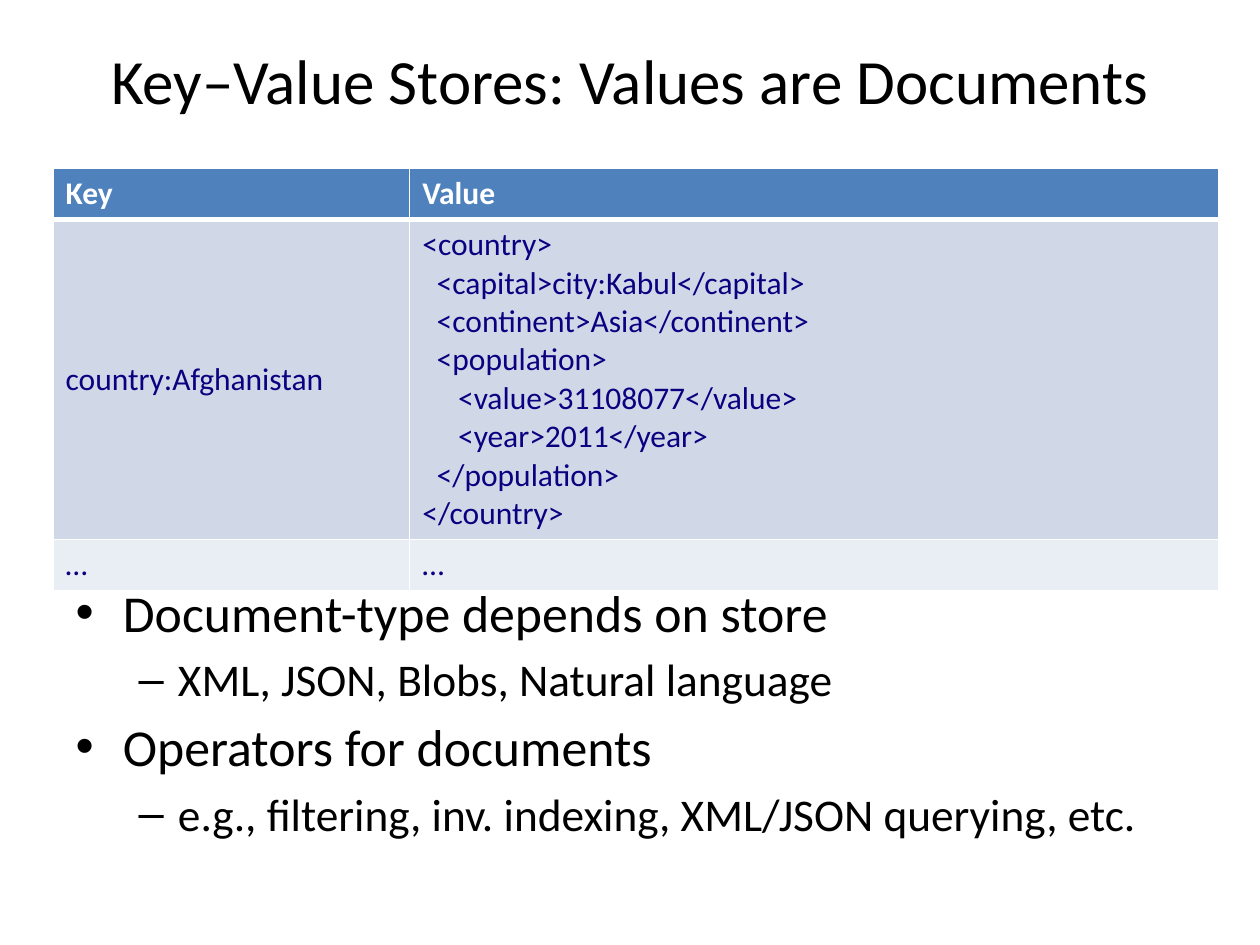
from dataclasses import dataclass

from lxml.etree import SubElement
from pptx import Presentation
from pptx.dml.color import RGBColor
from pptx.enum.text import MSO_ANCHOR, MSO_AUTO_SIZE, PP_ALIGN
from pptx.oxml.ns import qn
from pptx.util import Cm, Pt


@dataclass(frozen=True)
class Theme:
    font: str = "Calibri"
    ink: str = "000000"
    white: str = "FFFFFF"
    code: str = "0B0080"
    header: str = "4F81BD"
    bands: tuple = ("D0D8E8", "E9EDF4")
    title_size: float = 36
    level_sizes: tuple = (29.6, 25.9)
    table_size: float = 18


theme = Theme()


def add_run(paragraph, text, size, color, bold=False):
    run = paragraph.add_run()
    run.text = text
    run.font.name = theme.font
    run.font.size = Pt(size)
    run.font.bold = bold
    run.font.color.rgb = RGBColor.from_string(color)


def add_border(cell, side, width):
    line = SubElement(cell._tc.get_or_add_tcPr(), qn(f"a:ln{side}"), w=str(Pt(width)))
    fill = SubElement(line, qn("a:solidFill"))
    SubElement(fill, qn("a:srgbClr"), val=theme.white)


prs = Presentation()
prs.slide_width, prs.slide_height = Cm(25.4), Cm(19.05)
slide = prs.slides.add_slide(prs.slide_layouts[1])

title = slide.shapes.title
title.left, title.top, title.width, title.height = Cm(1.27), Cm(0), Cm(22.86), Cm(3.18)
heading = title.text_frame
heading.vertical_anchor = MSO_ANCHOR.MIDDLE
heading.paragraphs[0].alignment = PP_ALIGN.CENTER
add_run(heading.paragraphs[0], "Key–Value Stores: Values are Documents", theme.title_size, theme.ink)

points = [
    (0, "Document-type depends on store"),
    (1, "XML, JSON, Blobs, Natural language"),
    (0, "Operators for documents"),
    (1, "e.g., filtering, inv. indexing, XML/JSON querying, etc."),
]
body = slide.placeholders[1]
body.left, body.top, body.width, body.height = Cm(1.27), Cm(11.58), Cm(22.86), Cm(6.2)
outline = body.text_frame
outline.auto_size = MSO_AUTO_SIZE.NONE
for index, (level, point) in enumerate(points):
    paragraph = outline.add_paragraph() if index else outline.paragraphs[0]
    paragraph.level = level
    paragraph.space_before = Pt(5 if index else 0)
    add_run(paragraph, point, theme.level_sizes[level], theme.ink)

document = [
    (0, "<country>"),
    (0.29, "<capital>city:Kabul</capital>"),
    (0.29, "<continent>Asia</continent>"),
    (0.29, "<population>"),
    (0.72, "<value>31108077</value>"),
    (0.72, "<year>2011</year>"),
    (0.29, "</population>"),
    (0, "</country>"),
]
entries = [
    ([(0, "Key")], [(0, "Value")]),
    ([(0, "country:Afghanistan")], document),
    ([(0, "…")], [(0, "…")]),
]
column_widths = [7.19, 16.31]
row_heights = [1.03, 6.45, 1.03]
store = slide.shapes.add_table(
    len(entries), len(column_widths),
    Cm(1.07), Cm(3.39), Cm(sum(column_widths)), Cm(sum(row_heights)),
).table
for column, width in zip(store.columns, column_widths):
    column.width = Cm(width)
for row, height in zip(store.rows, row_heights):
    row.height = Cm(height)

for row_index, entry in enumerate(entries):
    is_header = row_index == 0
    background = theme.header if is_header else theme.bands[row_index - 1]
    color = theme.white if is_header else theme.code
    for column_index, lines in enumerate(entry):
        cell = store.cell(row_index, column_index)
        cell.vertical_anchor = MSO_ANCHOR.TOP if is_header else MSO_ANCHOR.MIDDLE
        for side in "LRTB":
            below_header = (row_index, side) in [(0, "B"), (1, "T")]
            add_border(cell, side, 3 if below_header else 1)
        cell.fill.solid()
        cell.fill.fore_color.rgb = RGBColor.from_string(background)
        for line_index, (indent, line) in enumerate(lines):
            frame = cell.text_frame
            paragraph = frame.add_paragraph() if line_index else frame.paragraphs[0]
            if indent:
                paragraph._p.get_or_add_pPr().set("marL", str(Cm(indent)))
            add_run(paragraph, line, theme.table_size, color, is_header)

prs.save("out.pptx")
